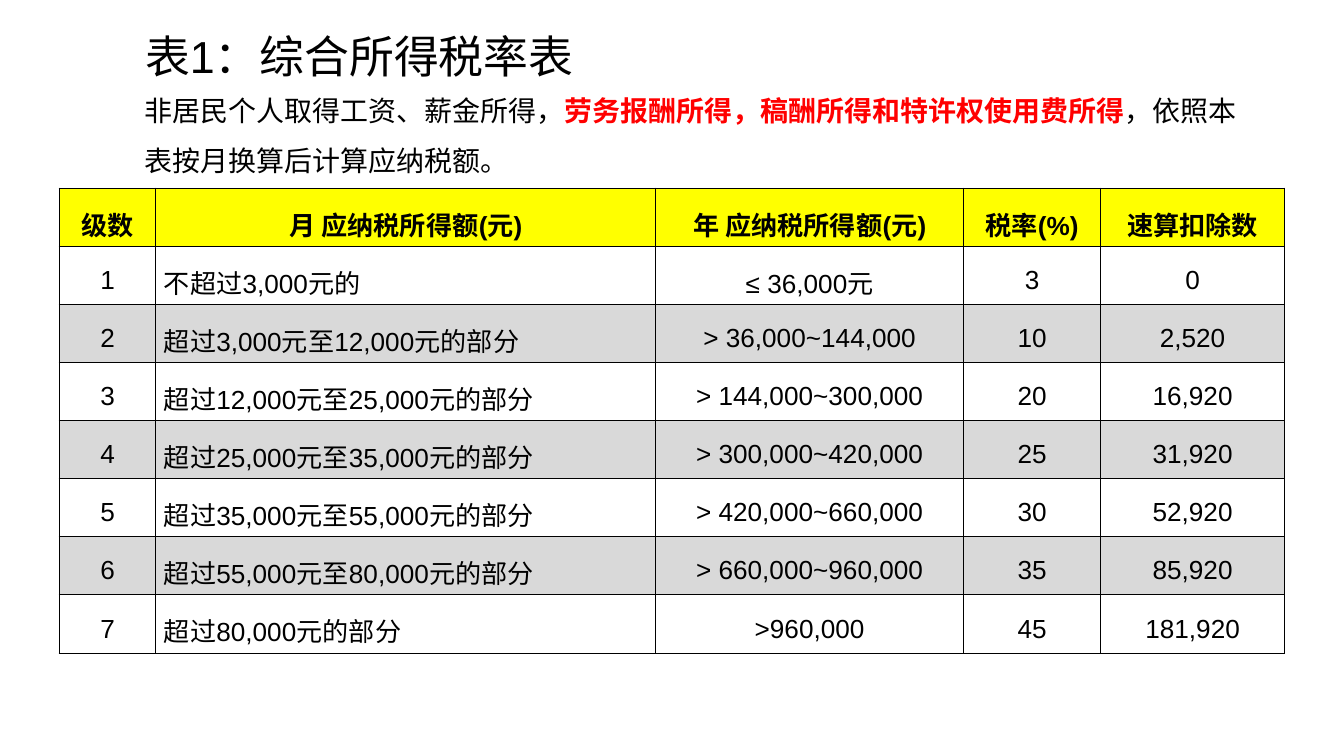
from dataclasses import dataclass

from lxml.etree import SubElement
from pptx import Presentation
from pptx.dml.color import RGBColor
from pptx.enum.text import MSO_ANCHOR as Anchor, MSO_AUTO_SIZE as AutoSize, PP_ALIGN as Align
from pptx.oxml.ns import qn
from pptx.util import Inches, Pt


@dataclass(frozen=True)
class Theme:
    font: str = "Arial"
    text: str = "000000"
    accent: str = "FF0000"
    header: str = "FFFF00"
    band: str = "D9D9D9"
    border: str = "000000"
    border_width: float = 0.5
    title_size: int = 24
    intro_size: int = 15
    table_size: int = 14


THEME = Theme()

PAGE_WIDTH = 10
PAGE_HEIGHT = PAGE_WIDTH * 9 / 16

HEADINGS = ["级数", "月 应纳税所得额(元)", "年 应纳税所得额(元)", "税率(%)", "速算扣除数"]
BRACKETS = [
    ("1", "不超过3,000元的", "≤ 36,000元", "3", "0"),
    ("2", "超过3,000元至12,000元的部分", "> 36,000~144,000", "10", "2,520"),
    ("3", "超过12,000元至25,000元的部分", "> 144,000~300,000", "20", "16,920"),
    ("4", "超过25,000元至35,000元的部分", "> 300,000~420,000", "25", "31,920"),
    ("5", "超过35,000元至55,000元的部分", "> 420,000~660,000", "30", "52,920"),
    ("6", "超过55,000元至80,000元的部分", "> 660,000~960,000", "35", "85,920"),
    ("7", "超过80,000元的部分", ">960,000", "45", "181,920"),
]
COLUMN_WIDTHS = [0.72, 3.72, 2.29, 1.02, 1.37]
MONTHLY_COLUMN = 1


def write(frame, *spans, size, align=Align.LEFT, spacing=1.3, bold=False):
    """Fill a frame with one paragraph; each span is (text, is_highlighted)."""
    frame.word_wrap = True
    para = frame.paragraphs[0]
    para.alignment = align
    para.line_spacing = spacing
    para.space_before = Pt(0)
    for text, highlighted in spans:
        span = para.add_run()
        span.text = text
        span.font.name = THEME.font
        span.font.size = Pt(size)
        span.font.bold = bold or highlighted
        color = THEME.accent if highlighted else THEME.text
        span.font.color.rgb = RGBColor.from_string(color)


def add_borders(cell):
    properties = cell._tc.get_or_add_tcPr()
    for side in ("lnL", "lnR", "lnT", "lnB"):
        line = SubElement(properties, qn(f"a:{side}"), w=str(Pt(THEME.border_width)))
        fill = SubElement(line, qn("a:solidFill"))
        SubElement(fill, qn("a:srgbClr"), val=THEME.border)


def paint(cell, color):
    if color is None:
        cell.fill.background()
    else:
        cell.fill.solid()
        cell.fill.fore_color.rgb = RGBColor.from_string(color)


def build_title(page, left, top, width, height):
    title = page.shapes.title
    title.left, title.top = Inches(left), Inches(top)
    title.width, title.height = Inches(width), Inches(height)
    frame = title.text_frame
    frame.auto_size = AutoSize.NONE
    frame.vertical_anchor = Anchor.MIDDLE
    write(frame, ("表1：综合所得税率表", False), size=THEME.title_size)


def build_intro(page, left, top, width, height):
    box = page.shapes.add_textbox(Inches(left), Inches(top), Inches(width), Inches(height))
    box.text_frame.auto_size = AutoSize.SHAPE_TO_FIT_TEXT
    write(
        box.text_frame,
        ("非居民个人取得工资、薪金所得，", False),
        ("劳务报酬所得，稿酬所得和特许权使用费所得", True),
        ("，依照本表按月换算后计算应纳税额。", False),
        size=THEME.intro_size,
        spacing=1.5,
    )


def build_rate_table(page, left, top, width, height):
    rows = [HEADINGS, *BRACKETS]
    table = page.shapes.add_table(
        len(rows), len(HEADINGS), Inches(left), Inches(top), Inches(width), Inches(height)
    ).table
    # Columns share the given width in fixed proportions
    for column, share in zip(table.columns, COLUMN_WIDTHS):
        column.width = Inches(width * share / sum(COLUMN_WIDTHS))

    for row_index, values in enumerate(rows):
        is_header = row_index == 0
        banded = row_index % 2 == 0
        color = THEME.header if is_header else THEME.band if banded else None
        for column_index, value in enumerate(values):
            cell = table.cell(row_index, column_index)
            is_range = column_index == MONTHLY_COLUMN and not is_header
            cell.margin_left = Inches(0.06 if is_range else 0.01)
            cell.margin_right = cell.margin_top = Inches(0.01)
            cell.margin_bottom = 0
            cell.vertical_anchor = Anchor.MIDDLE
            add_borders(cell)
            paint(cell, color)
            write(
                cell.text_frame,
                (value, False),
                size=THEME.table_size,
                align=Align.LEFT if is_range else Align.CENTER,
                bold=is_header,
            )


def main():
    deck = Presentation()
    deck.slide_width, deck.slide_height = Inches(PAGE_WIDTH), Inches(PAGE_HEIGHT)
    page = deck.slides.add_slide(deck.slide_layouts.get_by_name("Title Only"))
    build_title(page, 0.98, 0.16, 6.54, 0.39)
    build_rate_table(page, 0.44, 1.4, 9.12, 3.46)
    build_intro(page, 0.98, 0.52, 8.42, 0.86)
    deck.save("out.pptx")


if __name__ == "__main__":
    main()
